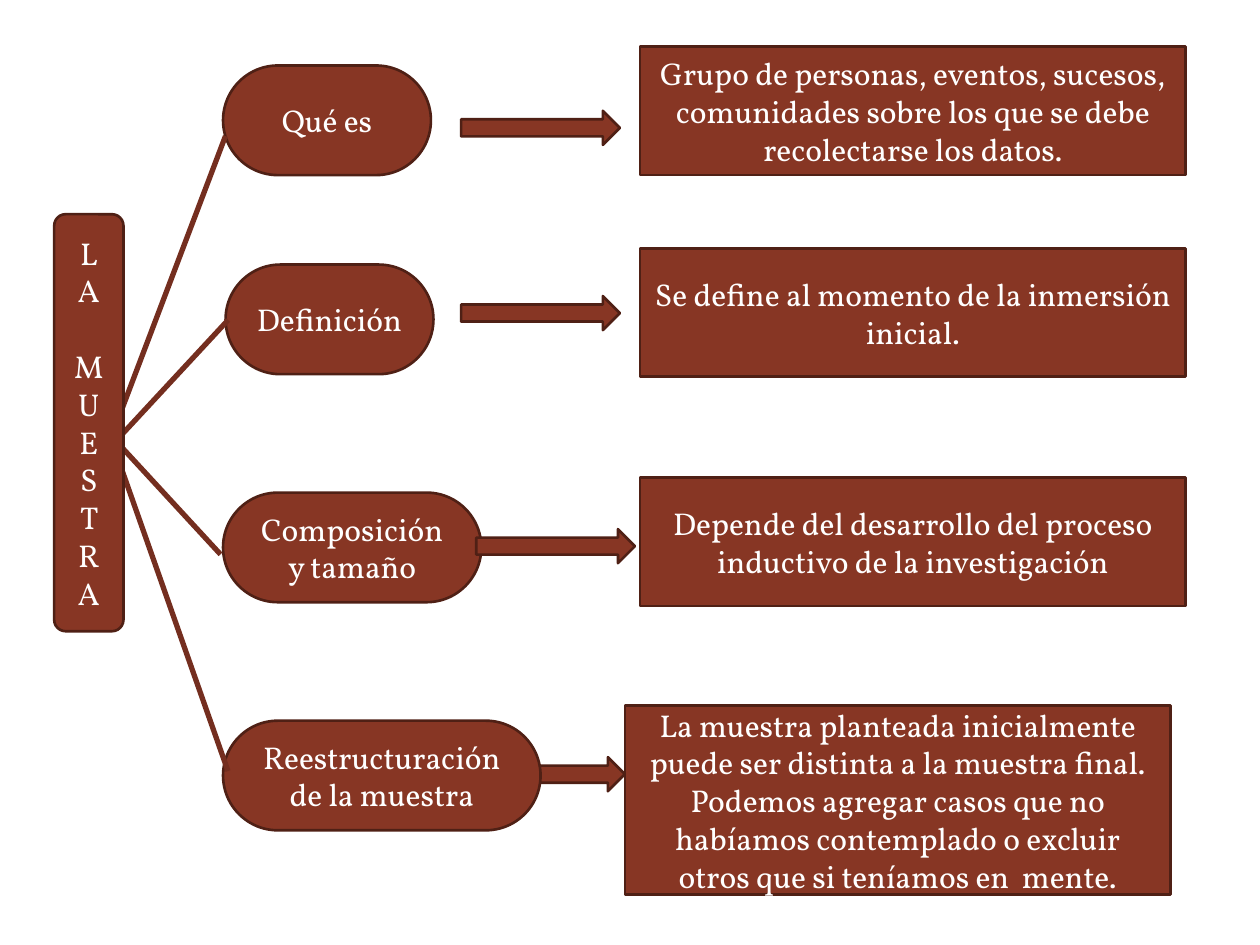
from dataclasses import dataclass

from pptx import Presentation
from pptx.dml.color import RGBColor
from pptx.enum.shapes import MSO_SHAPE
from pptx.enum.text import MSO_ANCHOR, PP_ALIGN
from pptx.util import Inches, Pt

ROUNDED = MSO_SHAPE.ROUNDED_RECTANGLE
ARROW = MSO_SHAPE.RIGHT_ARROW
MIDDLE = MSO_ANCHOR.MIDDLE
CENTER = PP_ALIGN.CENTER


@dataclass(frozen=True)
class Theme:
    fill: RGBColor = RGBColor(0x87, 0x36, 0x24)
    outline: RGBColor = RGBColor(0x4F, 0x20, 0x15)
    branch: RGBColor = RGBColor(0x74, 0x2E, 0x1F)
    text: RGBColor = RGBColor(0xFF, 0xFF, 0xFF)
    font: str = "Vollkorn"
    size: Pt = Pt(18)
    outline_width: Pt = Pt(1.5)
    branch_width: Pt = Pt(3)
    word_gap: Pt = Pt(21.6)


@dataclass(frozen=True)
class Area:
    left: float
    top: float
    width: float
    height: float


@dataclass(frozen=True)
class Topic:
    label: str
    label_area: Area
    detail: str
    detail_area: Area
    arrow_left: float
    arrow_top: float


THEME = Theme()
LABEL_HEIGHT = 0.87
DETAIL_WIDTH, DETAIL_HEIGHT = 4.33, 1.02
ARROW_WIDTH, ARROW_HEIGHT = 1.26, 0.27

TOPICS = [
    Topic("Qué es", Area(1.77, 0.52, 1.65, LABEL_HEIGHT),
          "Grupo de personas, eventos, sucesos, comunidades sobre los que se "
          "debe recolectarse los datos.",
          Area(5.08, 0.37, DETAIL_WIDTH, DETAIL_HEIGHT), 3.66, 0.88),
    Topic("Definición", Area(1.79, 2.1, 1.65, LABEL_HEIGHT),
          "Se define al momento de la inmersión inicial.",
          Area(5.08, 1.97, DETAIL_WIDTH, DETAIL_HEIGHT), 3.66, 2.35),
    Topic("Composición y tamaño", Area(1.77, 3.91, 2.05, LABEL_HEIGHT),
          "Depende del desarrollo del proceso inductivo de la investigación",
          Area(5.08, 3.79, DETAIL_WIDTH, DETAIL_HEIGHT), 3.78, 4.2),
    Topic("Reestructuración de la muestra",
          Area(1.77, 5.72, 2.52, LABEL_HEIGHT),
          "La muestra planteada inicialmente puede ser distinta a la muestra "
          "final. Podemos agregar casos que no habíamos contemplado o excluir "
          "otros que si teníamos en  mente.",
          Area(4.96, 5.6, DETAIL_WIDTH, 1.5), 3.7, 6.01),
]

# Each branch runs from an upper topic through the title to a lower topic
BRANCHES = [
    [(1.79, 1.08), (0.88, 3.48), (1.81, 6.12)],
    [(1.81, 2.54), (0.92, 3.5), (1.75, 4.4)],
]

# The narrow title box wraps to one letter a line
TITLE_AREA = Area(0.43, 1.7, 0.55, 3.31)
TITLE_WORDS = [["LA"], ["MUE", "S", "TRA"]]


def add_block(slide, preset: MSO_SHAPE, area: Area):
    block = slide.shapes.add_shape(preset, Inches(area.left), Inches(area.top),
                                   Inches(area.width), Inches(area.height))
    block.shadow.inherit = False
    block.fill.solid()
    block.fill.fore_color.rgb = THEME.fill
    block.line.color.rgb = THEME.outline
    block.line.width = THEME.outline_width
    return block


def style_paragraph(para) -> None:
    para.alignment = CENTER
    para.font.name = THEME.font
    para.font.size = THEME.size
    para.font.color.rgb = THEME.text


def add_text_block(slide, area: Area, text: str, rounding: float) -> None:
    block = add_block(slide, ROUNDED, area)
    block.adjustments[0] = rounding
    frame = block.text_frame
    frame.word_wrap = True
    frame.vertical_anchor = MIDDLE
    frame.text = text
    style_paragraph(frame.paragraphs[0])


def add_arrow(slide, topic: Topic) -> None:
    add_block(slide, ARROW, Area(topic.arrow_left, topic.arrow_top,
                                 ARROW_WIDTH, ARROW_HEIGHT))


def add_branch(slide, points: list[tuple[float, float]]) -> None:
    start, *rest = [(Inches(x), Inches(y)) for x, y in points]
    builder = slide.shapes.build_freeform(*start)
    builder.add_line_segments(rest, close=False)
    branch = builder.convert_to_shape()
    branch.shadow.inherit = False
    branch.fill.background()
    branch.line.color.rgb = THEME.branch
    branch.line.width = THEME.branch_width


def add_title(slide) -> None:
    frame = add_block(slide, ROUNDED, TITLE_AREA).text_frame
    frame.word_wrap = True
    frame.vertical_anchor = MIDDLE
    frame.text = "\n".join(part for word in TITLE_WORDS for part in word)
    for para in frame.paragraphs:
        style_paragraph(para)
    second_word = frame.paragraphs[len(TITLE_WORDS[0])]
    second_word.space_before = THEME.word_gap


def main() -> None:
    deck = Presentation()
    deck.slide_width, deck.slide_height = Inches(10), Inches(7.5)
    page = deck.slides.add_slide(deck.slide_layouts[6])

    # The last arrow starts behind its topic
    *front_topics, last_topic = TOPICS
    add_arrow(page, last_topic)

    # Topics and their details
    for topic in TOPICS:
        add_text_block(page, topic.label_area, topic.label, rounding=0.5)
        add_text_block(page, topic.detail_area, topic.detail, rounding=0)
    for topic in front_topics:
        add_arrow(page, topic)

    # Branches, with the title over their meeting point
    for points in BRANCHES:
        add_branch(page, points)
    add_title(page)

    deck.save("out.pptx")


if __name__ == "__main__":
    main()
